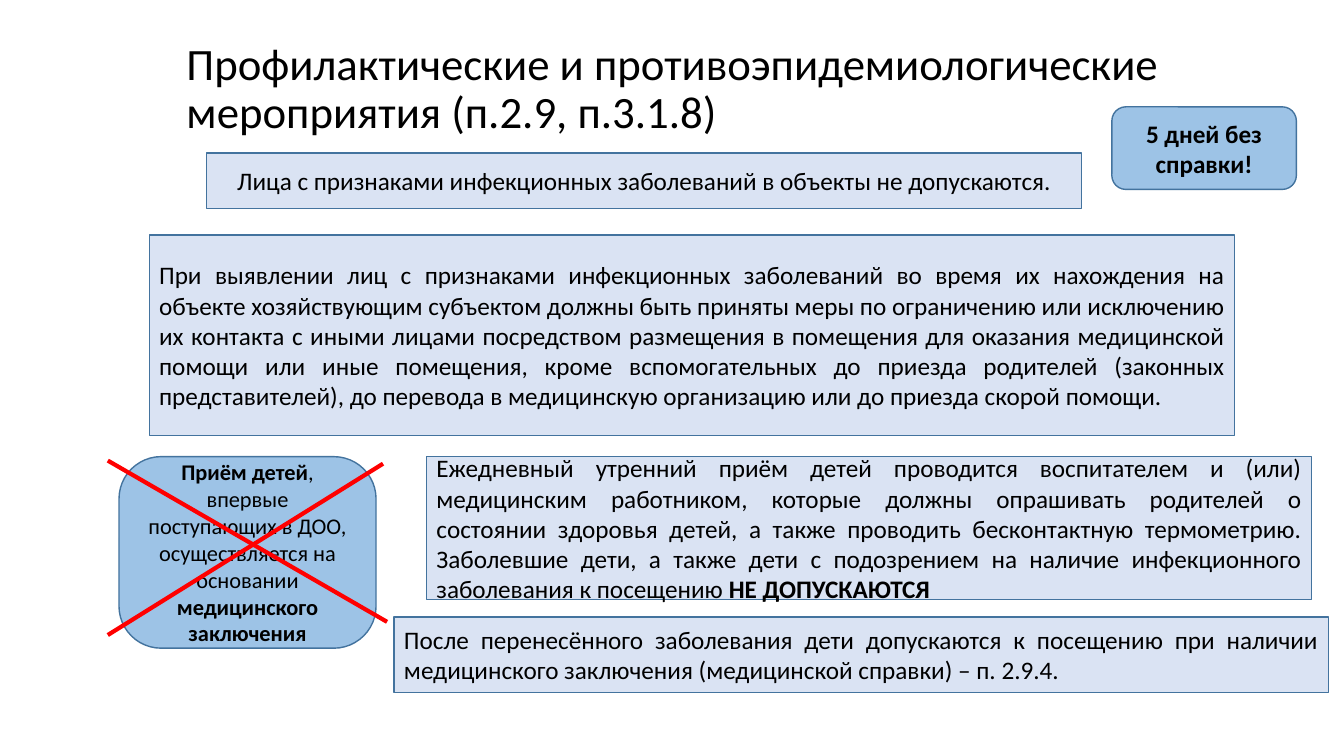
from pptx import Presentation
from pptx.dml.color import RGBColor
from pptx.enum.shapes import MSO_CONNECTOR as Conn, MSO_SHAPE as Shape
from pptx.enum.text import MSO_ANCHOR as Anchor, MSO_AUTO_SIZE as AutoSize, PP_ALIGN as Align
from pptx.util import Pt
from lxml import etree

COLORS = {"text": "000000", "panel": "DAE3F3", "badge": "9DC3E6",
          "border": "43739E", "cross": "FF0000"}
FONT = "Calibri"

TITLE = "Профилактические и противоэпидемиологические мероприятия (п.2.9, п.3.1.8)"
TITLE_BOX = (126, 18.7, 799.2, 90.7)

PANELS = [
    ((106.6, 167.8, 775.4, 143.3), Align.JUSTIFY, [[(
        "При выявлении лиц с признаками инфекционных заболеваний во время их нахождения "
        "на объекте хозяйствующим субъектом должны быть приняты меры по ограничению или "
        "исключению их контакта с иными лицами посредством размещения в помещения для "
        "оказания медицинской помощи или иные помещения, кроме вспомогательных до приезда "
        "родителей (законных представителей), до перевода в медицинскую организацию или "
        "до приезда скорой помощи.", False)]]),
    ((147.6, 109.4, 625, 39.6), Align.CENTER, [[(
        "Лица с признаками инфекционных заболеваний в объекты не допускаются.", False)]]),
    ((304.6, 326.2, 632.2, 102.2), Align.JUSTIFY, [[(
        "Ежедневный утренний приём детей проводится воспитателем и (или) медицинским "
        "работником, которые должны опрашивать родителей о состоянии здоровья детей, а "
        "также проводить бесконтактную термометрию. Заболевшие дети, а также дети с "
        "подозрением на наличие инфекционного заболевания к посещению ", False),
        ("НЕ ДОПУСКАЮТСЯ", True)]]),
    ((281.5, 440.6, 667.4, 54), Align.JUSTIFY, [[(
        "После перенесённого заболевания дети допускаются к посещению при наличии "
        "медицинского заключения (медицинской справки) – п. 2.9.4.", False)]]),
]

BADGES = [
    ((794.2, 76.3, 131.8, 59), 0.17, 18, [[("5 дней без", True)], [("справки!", True)]]),
    ((85, 326.2, 183.6, 136.8), 0.22, 16, [[
        ("Приём детей", True),
        (", впервые поступающих в ДОО, осуществляется на основании ", False),
        ("медицинского заключения", True)]]),
]

CROSS = [(77, 329, 276.5, 444.2), (77, 453.6, 273.6, 331.2)]


def rgb(name):
    return RGBColor.from_string(COLORS[name])


def write(tf, paragraphs, size=18, align=Align.LEFT, spacing=None):
    tf.word_wrap = True
    tf.auto_size = AutoSize.NONE
    tf.vertical_anchor = Anchor.MIDDLE
    for i, runs in enumerate(paragraphs):
        p = tf.add_paragraph() if i else tf.paragraphs[0]
        p.alignment = align
        p.line_spacing = spacing
        for text, bold in runs:
            r = p.add_run()
            r.text = text
            r.font.name = FONT
            r.font.size = Pt(size)
            r.font.bold = bold
            r.font.color.rgb = rgb("text")


def add_box(slide, kind, box, fill):
    sp = slide.shapes.add_shape(kind, *map(Pt, box))
    sp.shadow.inherit = False
    sp.fill.solid()
    sp.fill.fore_color.rgb = rgb(fill)
    sp.line.color.rgb = rgb("border")
    sp.line.width = Pt(1)
    return sp


def add_stroke(slide, ends):
    line = slide.shapes.add_connector(Conn.STRAIGHT, *map(Pt, ends))
    line.line.color.rgb = rgb("cross")
    line.line.width = Pt(3)
    ns = "http://schemas.openxmlformats.org/drawingml/2006/main"
    etree.SubElement(line._element.spPr, f"{{{ns}}}effectLst")


def main():
    prs = Presentation()
    prs.slide_width, prs.slide_height = Pt(960), Pt(540)
    s = prs.slides.add_slide(prs.slide_layouts[5])

    title = s.shapes.title
    title.left, title.top, title.width, title.height = map(Pt, TITLE_BOX)
    write(title.text_frame, [[(TITLE, False)]], size=32, spacing=0.9)

    for box, align, paragraphs in PANELS:
        sp = add_box(s, Shape.RECTANGLE, box, "panel")
        write(sp.text_frame, paragraphs, align=align)

    for box, radius, size, paragraphs in BADGES:
        sp = add_box(s, Shape.ROUNDED_RECTANGLE, box, "badge")
        sp.adjustments[0] = radius
        write(sp.text_frame, paragraphs, size=size, align=Align.CENTER)

    for ends in CROSS:
        add_stroke(s, ends)

    prs.save("out.pptx")


if __name__ == "__main__":
    main()
